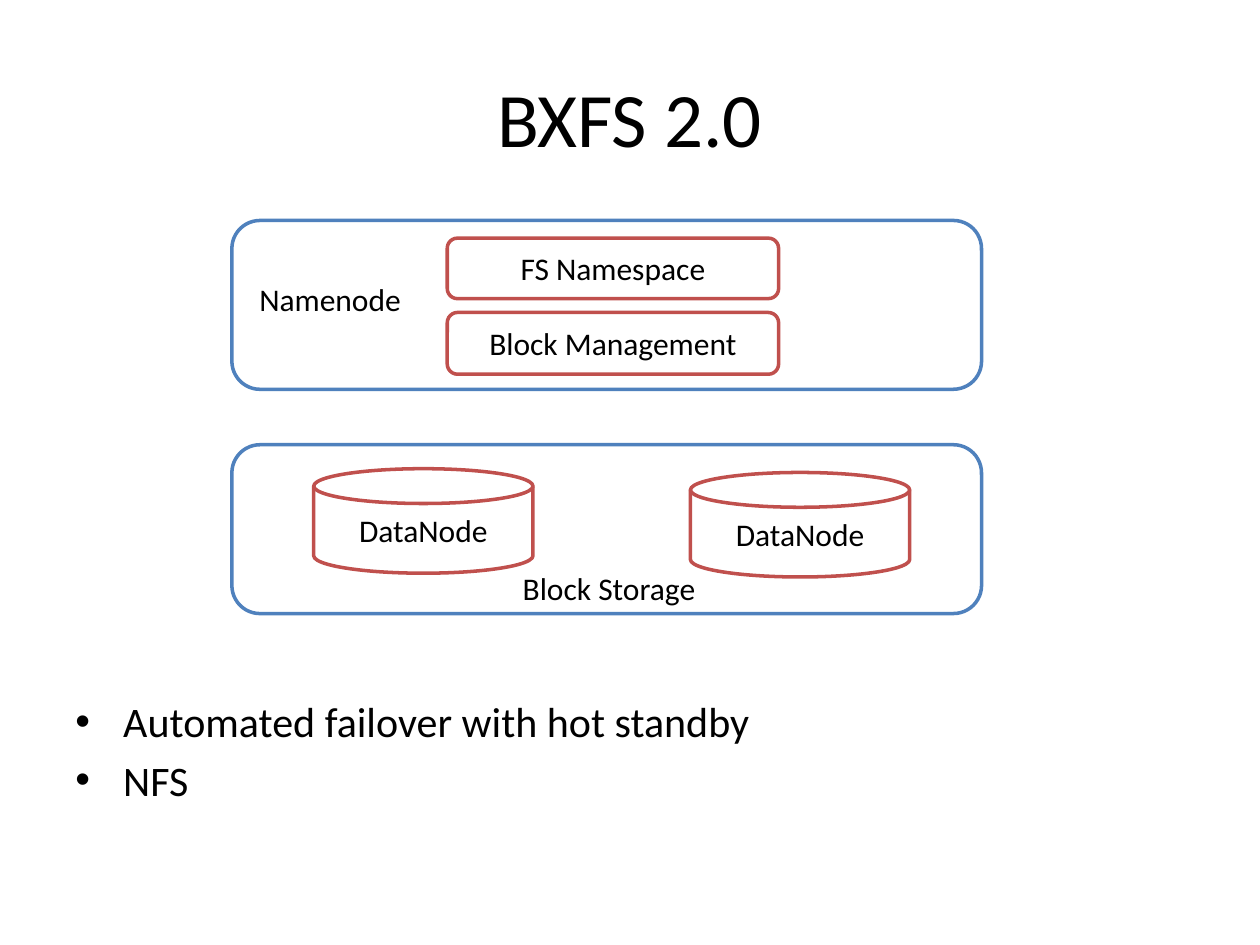
from lxml import etree
from pptx import Presentation
from pptx.dml.color import RGBColor
from pptx.enum.shapes import MSO_SHAPE as Shape
from pptx.enum.text import MSO_ANCHOR as Anchor, PP_ALIGN as Align
from pptx.oxml.ns import qn
from pptx.util import Inches, Pt

BLACK = RGBColor(0x00, 0x00, 0x00)
WHITE = RGBColor(0xFF, 0xFF, 0xFF)
BLUE = RGBColor(0x4F, 0x81, 0xBD)
RED = RGBColor(0xC0, 0x50, 0x4D)


def write(paragraph, text, size, align=Align.LEFT):
    paragraph.alignment = align
    run = paragraph.add_run()
    run.text = text
    run.font.color.rgb = BLACK
    for name, value in {"name": "Calibri", "size": Pt(size)}.items():
        setattr(run.font, name, value)


def add_outlined(slide, kind, box, color, text=None):
    """Add a white shape with a coloured outline and an optional centred label."""
    shape = slide.shapes.add_shape(kind, *map(Inches, box))
    shape.shadow.inherit = False
    shape.fill.solid()
    shape.fill.fore_color.rgb = WHITE
    shape.line.color.rgb = color
    shape.line.width = Pt(2)
    if text:
        shape.text_frame.vertical_anchor = Anchor.MIDDLE
        write(shape.text_frame.paragraphs[0], text, 18, Align.CENTER)


def add_text_box(slide, box, wrap=True, anchor=Anchor.TOP):
    frame = slide.shapes.add_textbox(*map(Inches, box)).text_frame
    for name, value in {"word_wrap": wrap, "vertical_anchor": anchor}.items():
        setattr(frame, name, value)
    return frame


def add_title(slide, box, text):
    frame = add_text_box(slide, box, anchor=Anchor.MIDDLE)
    write(frame.paragraphs[0], text, 44, Align.CENTER)


def add_label(slide, box, text):
    write(add_text_box(slide, box, wrap=False).paragraphs[0], text, 18)


def add_namenode(slide, box):
    left, top, _, _ = box
    add_outlined(slide, Shape.ROUNDED_RECTANGLE, box, BLUE)
    for offset, height, layer in ((0.73, 0.49, "Block Management"),
                                  (0.14, 0.48, "FS Namespace")):
        add_outlined(slide, Shape.ROUNDED_RECTANGLE,
                     (left + 1.71, top + offset, 2.63, height), RED, layer)
    add_label(slide, (left + 0.12, top + 0.42, 1.34, 0.4), "Namenode")


def add_block_storage(slide, box):
    left, top, _, height = box
    add_outlined(slide, Shape.ROUNDED_RECTANGLE, box, BLUE)
    for dx, dy in ((3.64, 0.22), (0.65, 0.19)):
        add_outlined(slide, Shape.FLOWCHART_MAGNETIC_DISK,
                     (left + dx, top + dy, 1.74, 0.83), RED, "DataNode")
    add_label(slide, (left + 2.21, top + height - 0.4, 1.6, 0.4), "Block Storage")


def add_bullets(slide, box, items):
    frame = add_text_box(slide, box)
    for index, item in enumerate(items):
        paragraph = frame.add_paragraph() if index else frame.paragraphs[0]
        write(paragraph, item, 24)
        paragraph.space_after = Pt(4.8)
        properties = paragraph._p.get_or_add_pPr()
        for name, indent in {"marL": 0.38, "indent": -0.38}.items():
            properties.set(name, str(Inches(indent)))
        etree.SubElement(properties, qn("a:buFont"), typeface="Arial")
        etree.SubElement(properties, qn("a:buChar"), char="•")


def main():
    deck = Presentation()
    deck.slide_width, deck.slide_height = Inches(10), Inches(7.5)
    slide = deck.slides.add_slide(deck.slide_layouts[6])
    add_title(slide, (0.5, 0.3, 9, 1.25), "BXFS 2.0")
    add_bullets(slide, (0.5, 5.47, 9, 1.23),
                ("Automated failover with hot standby", "NFS"))
    add_block_storage(slide, (1.84, 3.53, 5.95, 1.34))
    add_namenode(slide, (1.84, 1.75, 5.95, 1.34))
    deck.save("out.pptx")


if __name__ == "__main__":
    main()
